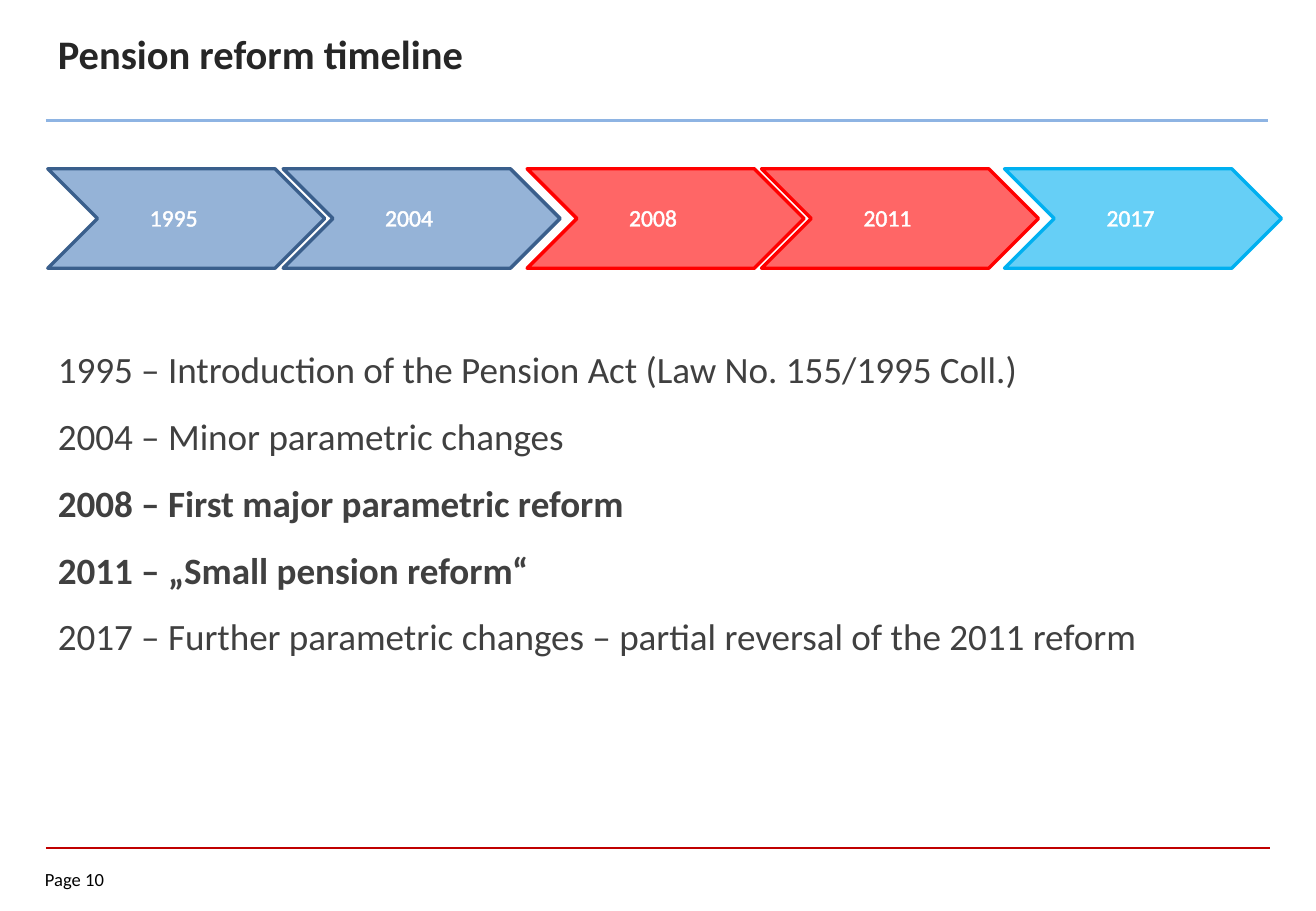
from lxml import etree
from pptx import Presentation
from pptx import util as u
from pptx.dml.color import RGBColor
from pptx.enum import shapes, text
from pptx.oxml import ns

COLORS = {
    "title": "262626", "body": "404040", "page": "000000", "label": "FFFFFF",
    "top_rule": "8EB4E3", "bottom_rule": "C00000",
    "blue": "4F81BD", "blue_edge": "3A5F8C", "red": "FF0000", "cyan": "00B0F0",
}

# year, left edge in cm, fill, outline
STEPS = [
    ("1995", 1.0, "blue", "blue_edge"),
    ("2004", 5.92, "blue", "blue_edge"),
    ("2008", 11.02, "red", "red"),
    ("2011", 15.92, "red", "red"),
    ("2017", 21.0, "cyan", "cyan"),
]

# text, bold
EVENTS = [
    ("1995 – Introduction of the Pension Act (Law No. 155/1995 Coll.)", False),
    ("2004 – Minor parametric changes", False),
    ("2008 – First major parametric reform", True),
    ("2011 – „Small pension reform“", True),
    ("2017 – Further parametric changes – partial reversal of the 2011 reform", False),
]

BODY_FORMAT = {"alignment": text.PP_ALIGN.JUSTIFY, "line_spacing": 1.5}
LABEL_FORMAT = {"line_spacing": 1.15, "space_after": u.Pt(10)}
PAGE_FRAME = {f"margin_{side}": 0 for side in ("left", "top", "right", "bottom")}


def color(name):
    return RGBColor.from_string(COLORS[name])


def set_attributes(target, values):
    for name, value in values.items():
        setattr(target, name, value)


def add_text(slide, box, lines, size, color_name, paragraph_format=None, frame_format=None):
    """Add a text box with one paragraph per (text, bold) pair."""
    frame = slide.shapes.add_textbox(*map(u.Cm, box)).text_frame
    set_attributes(frame, {"word_wrap": True, **(frame_format or {})})
    for index, (content, bold) in enumerate(lines):
        paragraph = frame.add_paragraph() if index else frame.paragraphs[0]
        set_attributes(paragraph, paragraph_format or {})
        run = paragraph.add_run()
        run.text = content
        set_attributes(run.font, {"name": "Calibri", "size": u.Pt(size), "bold": bold})
        run.font.color.rgb = color(color_name)
    return frame


def add_rule(slide, left, right, top, color_name, width):
    line = slide.shapes.add_connector(
        shapes.MSO_CONNECTOR.STRAIGHT, *map(u.Cm, (left, top, right, top)))
    line.line.color.rgb = color(color_name)
    line.line.width = u.Pt(width)
    etree.SubElement(line._element.spPr, ns.qn("a:effectLst"))


def add_solid_fill(parent, color_name):
    fill = etree.SubElement(parent, ns.qn("a:solidFill"))
    etree.SubElement(fill, ns.qn("a:srgbClr"), val=COLORS[color_name])


def outline_text(run, color_name, width):
    properties = run._r.get_or_add_rPr()
    outline = etree.Element(ns.qn("a:ln"), w=str(u.Pt(width)))
    add_solid_fill(outline, color_name)
    properties.insert(0, outline)


def add_step(slide, year, left, fill, edge):
    """Add a translucent chevron and its year label."""
    chevron = slide.shapes.add_shape(
        shapes.MSO_SHAPE.CHEVRON, *map(u.Cm, (left, 3.53, 5.79, 2.08)))
    chevron.shadow.inherit = False
    chevron.fill.solid()
    chevron.fill.fore_color.rgb = color(fill)
    fill_color = chevron._element.spPr.find(ns.qn("a:solidFill"))[0]
    etree.SubElement(fill_color, ns.qn("a:alpha"), val="60000")
    chevron.line.color.rgb = color(edge)
    chevron.line.width = u.Pt(2)
    frame = add_text(slide, (left + 1.88, 4.03, 1.6, 1.45), [(year, False)], 14,
                     "label", LABEL_FORMAT)
    outline_text(frame.paragraphs[0].runs[0], "label", 0.73)


def main():
    presentation = Presentation()
    presentation.slide_width = u.Cm(27.51)
    presentation.slide_height = u.Cm(19.05)
    slide = presentation.slides.add_slide(presentation.slide_layouts[6])

    add_rule(slide, 0.96, 26.55, 17.73, "bottom_rule", 1)
    add_rule(slide, 0.96, 26.51, 2.52, "top_rule", 1.5)
    add_text(slide, (0.94, 18.16, 1.85, 0.56), [("Page 10", False)], 11, "page",
             frame_format=PAGE_FRAME)
    add_text(slide, (0.96, 6.66, 25.55, 10.84), EVENTS, 22, "body", BODY_FORMAT)
    add_text(slide, (0.96, 0.48, 19.2, 1.8), [("Pension reform timeline", True)], 24, "title")
    for step in STEPS:
        add_step(slide, *step)

    presentation.save("out.pptx")


if __name__ == "__main__":
    main()
